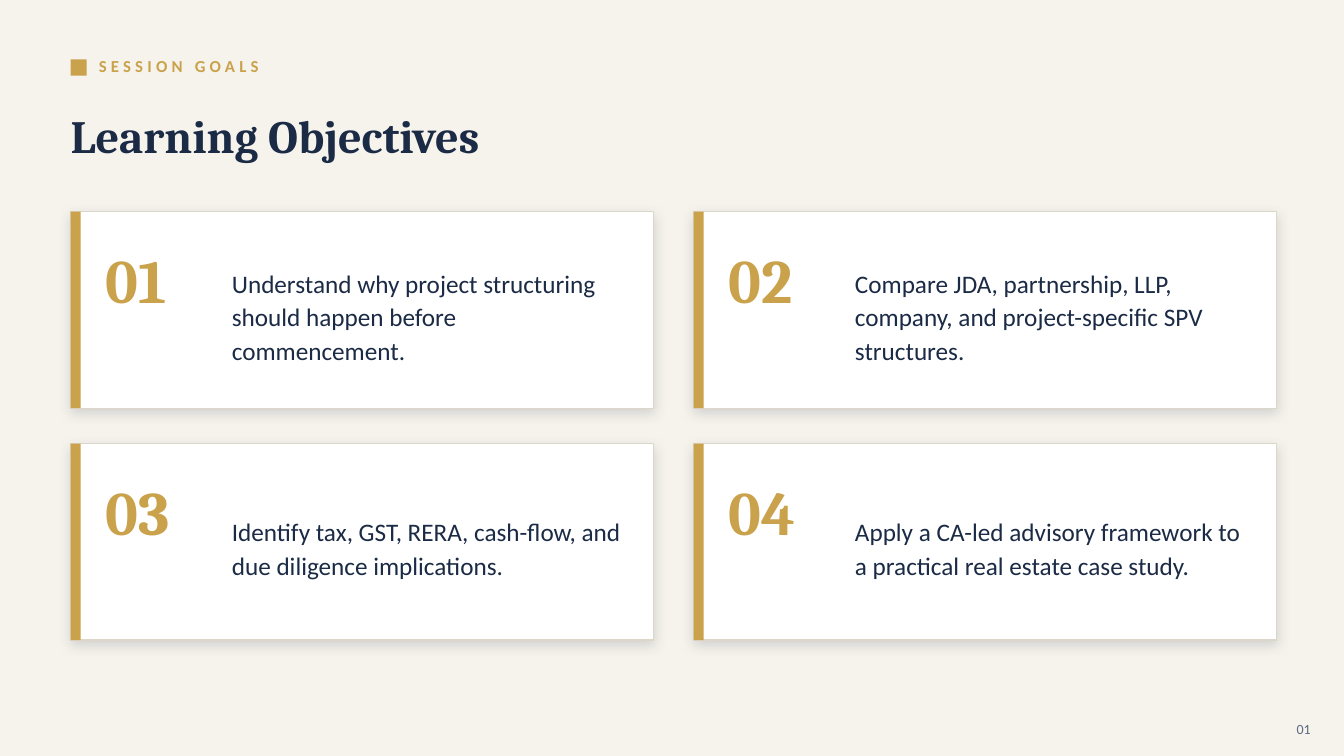
"""Build the Learning Objectives slide with four numbered cards."""
import dataclasses

import pptx
import pptx.dml.color
import pptx.enum.shapes
import pptx.enum.text
import pptx.oxml
import pptx.oxml.ns
import pptx.util

ANCHOR = pptx.enum.text.MSO_ANCHOR
ALIGN = pptx.enum.text.PP_ALIGN
EMU_PER_PX = 9144


@dataclasses.dataclass(frozen=True)
class Theme:
    paper: str = "F6F3EC"
    gold: str = "C9A24B"
    navy: str = "1B2A45"
    white: str = "FFFFFF"
    border: str = "DDD7C9"
    muted: str = "5C6B82"
    serif: str = "Cambria"
    sans: str = "Calibri"
    numeral_size: int = 44
    title_size: int = 33
    body_size: int = 18
    label_size: int = 12
    footer_size: int = 10


@dataclasses.dataclass(frozen=True)
class Box:
    left: int
    top: int
    width: int
    height: int

    def emu(self) -> tuple[int, ...]:
        return tuple(value * EMU_PER_PX for value in dataclasses.astuple(self))


@dataclasses.dataclass(frozen=True)
class Objective:
    number: str
    text: str


THEME = Theme()
OBJECTIVES = (
    Objective("01", "Understand why project structuring should happen before commencement."),
    Objective("02", "Compare JDA, partnership, LLP, company, and project-specific SPV structures."),
    Objective("03", "Identify tax, GST, RERA, cash-flow, and due diligence implications."),
    Objective("04", "Apply a CA-led advisory framework to a practical real estate case study."),
)
MARGIN, CARDS_TOP = 70, 210
CARD_WIDTH, CARD_HEIGHT = 578, 195
COLUMN_GAP, ROW_GAP = 40, 35
COLUMNS = 2


def rgb(value: str) -> pptx.dml.color.RGBColor:
    return pptx.dml.color.RGBColor.from_string(value)


def write_text(shape, text: str, *, size: int, color: str, font: str = THEME.sans,
               bold: bool = False, align=ALIGN.LEFT, anchor=ANCHOR.MIDDLE,
               line_spacing: float | None = None, tracking: int = 0) -> None:
    frame = shape.text_frame
    frame.word_wrap = True
    frame.auto_size = pptx.enum.text.MSO_AUTO_SIZE.NONE
    frame.vertical_anchor = anchor
    frame.margin_left = frame.margin_top = frame.margin_right = frame.margin_bottom = 0
    para = frame.paragraphs[0]
    para.alignment = align
    para.line_spacing = line_spacing
    span = para.add_run()
    span.text = text
    span.font.name = font
    span.font.size = pptx.util.Pt(size)
    span.font.bold = bold
    span.font.color.rgb = rgb(color)
    if tracking:
        span._r.get_or_add_rPr().set("spc", str(tracking * 100))


def add_text(page, box: Box, text: str, **style) -> None:
    write_text(page.shapes.add_textbox(*box.emu()), text, **style)


def add_rectangle(page, box: Box, fill: str, line: str | None = None):
    shape = page.shapes.add_shape(pptx.enum.shapes.MSO_SHAPE.RECTANGLE, *box.emu())
    shape.shadow.inherit = False
    shape.fill.solid()
    shape.fill.fore_color.rgb = rgb(fill)
    if line:
        shape.line.color.rgb = rgb(line)
        shape.line.width = pptx.util.Pt(1)
    else:
        shape.line.fill.background()
    return shape


def add_soft_shadow(shape) -> None:
    effects = shape._element.spPr.find(pptx.oxml.ns.qn("a:effectLst"))
    effects.append(pptx.oxml.parse_xml(
        f'<a:outerShdw {pptx.oxml.ns.nsdecls("a")} blurRad="{pptx.util.Pt(9)}" '
        f'dist="{pptx.util.Pt(3)}" dir="5400000" algn="ctr" rotWithShape="0">'
        f'<a:srgbClr val="{THEME.navy}"><a:alpha val="16000"/></a:srgbClr></a:outerShdw>'))


def add_card(page, left: int, top: int, objective: Objective) -> None:
    card = add_rectangle(page, Box(left, top, CARD_WIDTH, CARD_HEIGHT), THEME.white, THEME.border)
    add_soft_shadow(card)
    add_rectangle(page, Box(left, top, 10, CARD_HEIGHT), THEME.gold)
    add_text(page, Box(left + 35, top + 30, 150, 100), objective.number, font=THEME.serif,
             size=THEME.numeral_size, color=THEME.gold, bold=True, anchor=ANCHOR.TOP)
    add_text(page, Box(left + 160, top + 30, 393, 145), objective.text,
             size=THEME.body_size, color=THEME.navy, line_spacing=1.12)


def main() -> None:
    deck = pptx.Presentation()
    deck.slide_width, deck.slide_height = 1333 * EMU_PER_PX, 750 * EMU_PER_PX
    page = deck.slides.add_slide(deck.slide_layouts.get_by_name("Title Only"))
    page.background.fill.solid()
    page.background.fill.fore_color.rgb = rgb(THEME.paper)

    add_rectangle(page, Box(MARGIN, 59, 16, 16), THEME.gold)
    add_text(page, Box(98, 48, 900, 34), "SESSION GOALS", size=THEME.label_size,
             color=THEME.gold, bold=True, tracking=3)
    title = page.shapes.title
    title.left, title.top, title.width, title.height = Box(MARGIN, 88, 1195, 92).emu()
    write_text(title, "Learning Objectives", font=THEME.serif, size=THEME.title_size,
               color=THEME.navy, bold=True)

    for index, objective in enumerate(OBJECTIVES):
        row, column = divmod(index, COLUMNS)
        add_card(page, MARGIN + column * (CARD_WIDTH + COLUMN_GAP),
                 CARDS_TOP + row * (CARD_HEIGHT + ROW_GAP), objective)

    add_text(page, Box(1240, 708, 60, 30), "01", size=THEME.footer_size,
             color=THEME.muted, align=ALIGN.RIGHT)
    deck.save("out.pptx")


if __name__ == "__main__":
    main()
